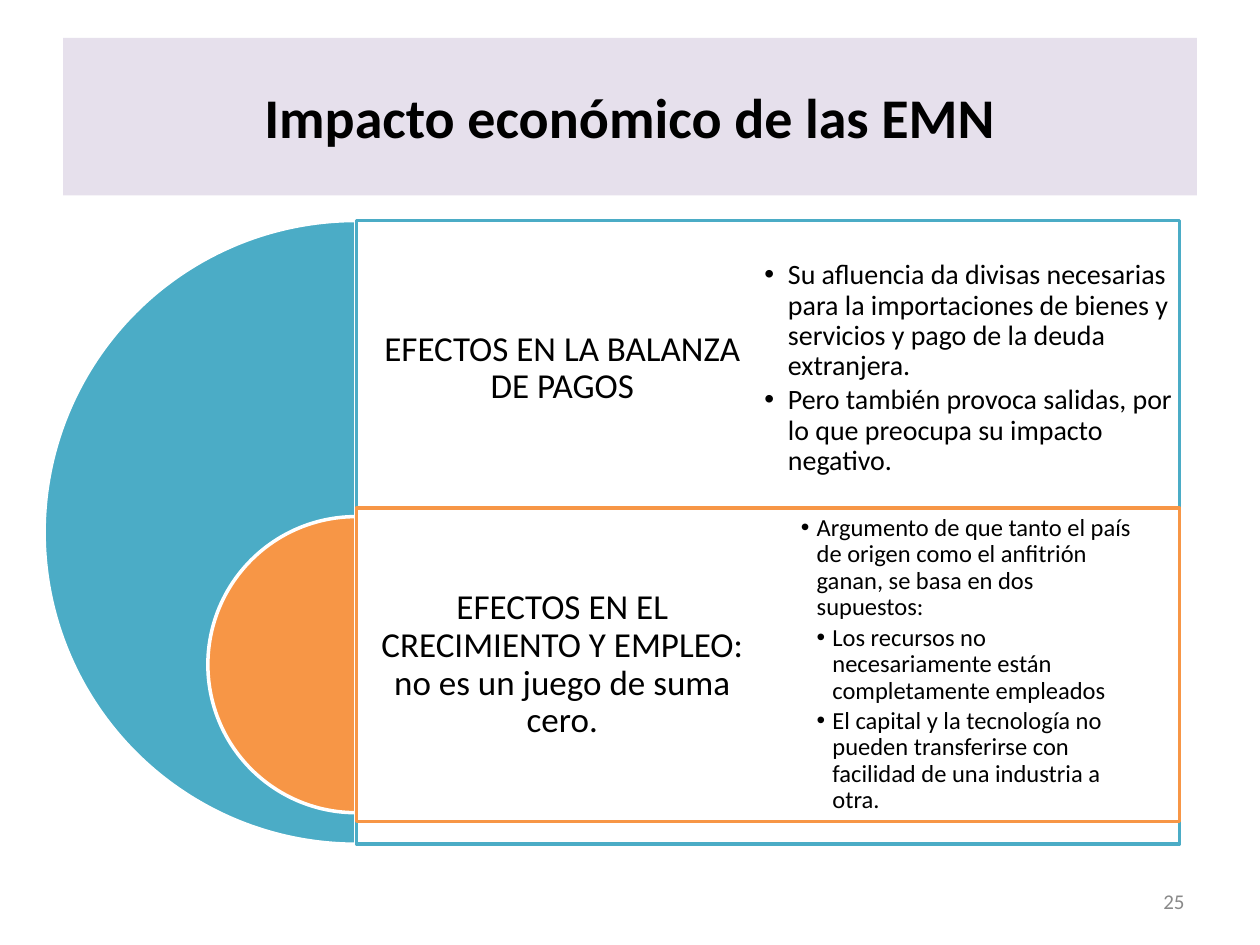
from lxml.etree import SubElement
from pptx import Presentation
from pptx.dml.color import RGBColor
from pptx.enum.shapes import MSO_SHAPE
from pptx.enum.text import MSO_ANCHOR, PP_ALIGN
from pptx.oxml.ns import qn
from pptx.util import Pt

BLACK = RGBColor(0x00, 0x00, 0x00)
WHITE = RGBColor(0xFF, 0xFF, 0xFF)
GRAY = RGBColor(0x89, 0x89, 0x89)
LAVENDER = RGBColor(0xE6, 0xE0, 0xEC)
TEAL = RGBColor(0x4B, 0xAC, 0xC6)
ORANGE = RGBColor(0xF7, 0x96, 0x46)

TITLE = "Impacto económico de las EMN"
PAGE_NUMBER = "25"
BANDS = [
    {
        "label": "EFECTOS EN LA BALANZA DE PAGOS",
        "color": TEAL, "pie_top": 126, "diameter": 356.4,
        "panel_top": 126, "panel_height": 356.4, "label_height": 169.2,
        "list_box": (417.6, 126, 277.2, 169.2), "size": 16, "indent": 13.5,
        "items": [
            (1, "Su afluencia da divisas necesarias para la importaciones de "
                "bienes y servicios y pago de la deuda extranjera."),
            (1, "Pero también provoca salidas, por lo que preocupa su impacto negativo."),
        ],
    },
    {
        "label": "EFECTOS EN EL CRECIMIENTO Y EMPLEO: no es un juego de suma cero.",
        "color": ORANGE, "pie_top": 295.2, "diameter": 169.2,
        "panel_top": 290.2, "panel_height": 179.3, "label_height": 179.3,
        "list_box": (438.5, 295.2, 234.7, 169.2), "size": 14, "indent": 9,
        "items": [
            (1, "Argumento de que tanto el país de origen como el anfitrión "
                "ganan, se basa en dos supuestos:"),
            (2, "Los recursos no necesariamente están completamente empleados"),
            (2, "El capital y la tecnología no pueden transferirse con "
                "facilidad de una industria a otra."),
        ],
    },
]
CENTER_X = 203.4
PANEL_LEFT, PANEL_WIDTH = 203.8, 470.2
LABEL_SIZE = 20


def points(*values):
    return [Pt(value) for value in values]


def apply(target, formats):
    for name, value in formats.items():
        setattr(target, name, value)


def format_font(font, size, color=BLACK, bold=False):
    apply(font, {"name": "Calibri", "size": Pt(size), "bold": bold})
    font.color.rgb = color


def add_shape(slide, kind, box, fill, line):
    shape = slide.shapes.add_shape(kind, *points(*box))
    shape.shadow.inherit = False
    shape.fill.solid()
    shape.fill.fore_color.rgb = fill
    shape.line.color.rgb = line
    shape.line.width = Pt(2)
    return shape


def add_text(slide, box, inset):
    frame = slide.shapes.add_textbox(*points(*box)).text_frame
    apply(frame, {"word_wrap": True, "vertical_anchor": MSO_ANCHOR.MIDDLE})
    sides = ("margin_left", "margin_top", "margin_right", "margin_bottom")
    apply(frame, dict.fromkeys(sides, Pt(inset)))
    return frame


def write(paragraph, text, size, color=BLACK, **formats):
    paragraph.text = text
    apply(paragraph, formats)
    format_font(paragraph.runs[0].font, size, color)


def add_bullet(paragraph, margin, indent):
    properties = paragraph._p.get_or_add_pPr()
    properties.set("marL", str(Pt(margin)))
    properties.set("indent", str(-Pt(indent)))
    SubElement(properties, qn("a:buFont"), typeface="Arial")
    SubElement(properties, qn("a:buChar"), char="•")


def add_band(slide, band):
    diameter = band["diameter"]
    pie_box = (CENTER_X - diameter / 2, band["pie_top"], diameter, diameter)
    pie = add_shape(slide, MSO_SHAPE.PIE, pie_box, band["color"], WHITE)
    pie.adjustments[0], pie.adjustments[1] = 54, 162

    top = band["panel_top"]
    panel_box = (PANEL_LEFT, top, PANEL_WIDTH, band["panel_height"])
    panel = add_shape(slide, MSO_SHAPE.RECTANGLE, panel_box, WHITE, band["color"])
    fill_color = panel._element.spPr.find(qn("a:solidFill"))[0]
    SubElement(fill_color, qn("a:alpha"), val="90000")

    label = add_text(slide, (PANEL_LEFT, top, PANEL_WIDTH / 2, band["label_height"]), 6)
    write(label.paragraphs[0], band["label"], LABEL_SIZE,
          alignment=PP_ALIGN.CENTER, line_spacing=0.9, space_after=Pt(0.35 * LABEL_SIZE))


def add_list(slide, band):
    frame = add_text(slide, band["list_box"], 19.2)
    size, indent = band["size"], band["indent"]
    for index, (level, text) in enumerate(band["items"]):
        paragraph = frame.add_paragraph() if index else frame.paragraphs[0]
        write(paragraph, text, size, level=level, line_spacing=0.9,
              space_after=Pt(0.15 * size))
        add_bullet(paragraph, level * indent, indent)


def main():
    presentation = Presentation()
    apply(presentation, {"slide_width": Pt(720), "slide_height": Pt(540)})
    slide = presentation.slides.add_slide(presentation.slide_layouts[5])

    title = slide.shapes.title
    apply(title, dict(zip(("left", "top", "width", "height"), points(36, 21.6, 648, 90))))
    title.fill.solid()
    title.fill.fore_color.rgb = LAVENDER
    title.text_frame.text = TITLE
    title.text_frame.vertical_anchor = MSO_ANCHOR.MIDDLE
    heading = title.text_frame.paragraphs[0]
    heading.alignment = PP_ALIGN.CENTER
    format_font(heading.runs[0].font, 32, bold=True)

    for band in BANDS:
        add_band(slide, band)
    for band in BANDS:
        add_list(slide, band)

    number = add_text(slide, (516, 500.5, 168, 28.8), 7.2)
    write(number.paragraphs[0], PAGE_NUMBER, 12, GRAY, alignment=PP_ALIGN.RIGHT)
    presentation.save("out.pptx")


if __name__ == "__main__":
    main()
